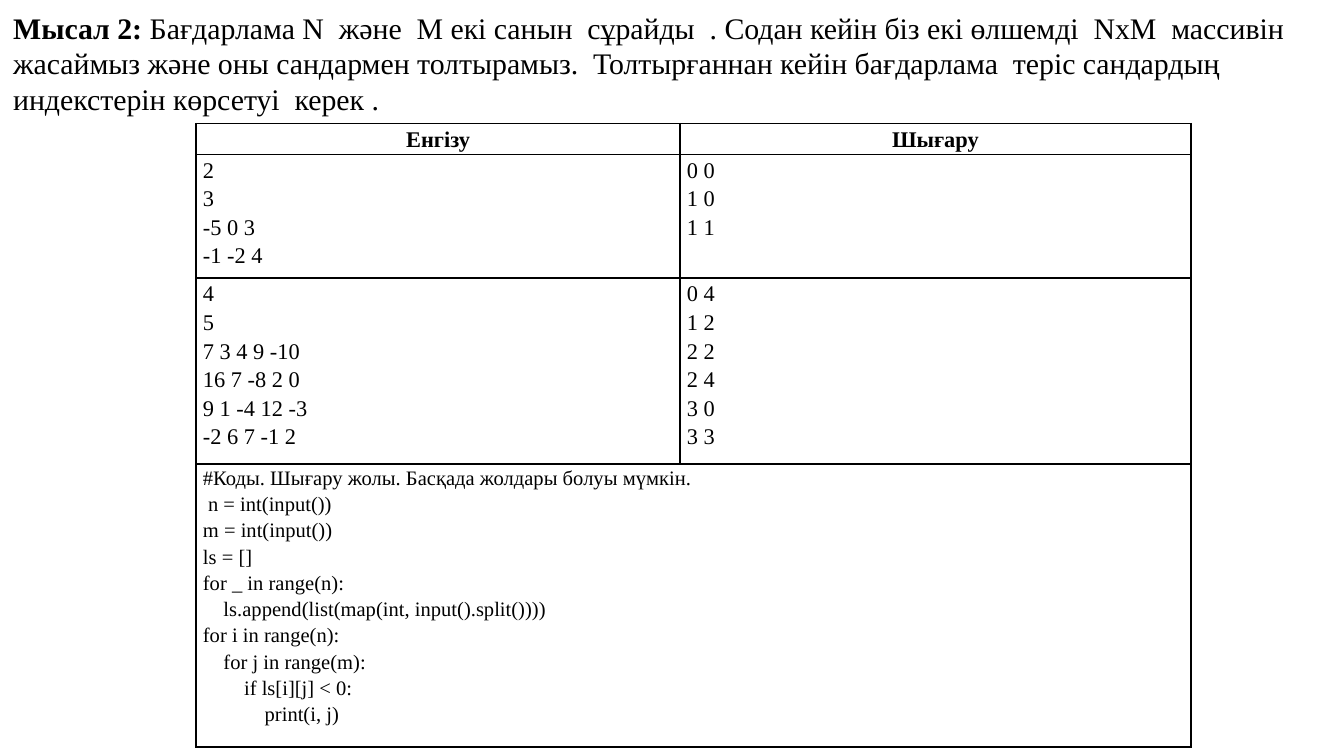
"""Build a slide with a matrix task, its sample runs and the code."""
from lxml import etree
from pptx import Presentation
from pptx.dml.color import RGBColor
from pptx.enum.text import MSO_AUTO_SIZE, PP_ALIGN
from pptx.oxml.ns import qn
from pptx.util import Inches, Pt

BLACK = RGBColor(0, 0, 0)
FONT = "Times New Roman"
CENTER = PP_ALIGN.CENTER
LEFT = PP_ALIGN.LEFT
GROW = MSO_AUTO_SIZE.SHAPE_TO_FIT_TEXT

CODE = """#Коды. Шығару жолы. Басқада жолдары болуы мүмкін.
 n = int(input())
m = int(input())
ls = []
for _ in range(n):
    ls.append(list(map(int, input().split())))
for i in range(n):
    for j in range(m):
        if ls[i][j] < 0:
            print(i, j)"""

ROWS = [
    (0.23, 12, ["Енгізу", "Шығару"]),
    (0.92, 12, ["2\n3\n-5 0 3\n-1 -2 4", "0 0\n1 0\n1 1"]),
    (1.38, 12, ["4\n5\n7 3 4 9 -10\n16 7 -8 2 0\n9 1 -4 12 -3\n-2 6 7 -1 2",
                "0 4\n1 2\n2 2\n2 4\n3 0\n3 3"]),
    (2.11, 11, [CODE]),
]


def style(run, size, bold):
    font = run.font
    font.name = FONT
    font.size = Pt(size)
    font.bold = bold
    font.color.rgb = BLACK


def border(cell):
    props = cell._tc.get_or_add_tcPr()
    for side in ("a:lnL", "a:lnR", "a:lnT", "a:lnB"):
        line = etree.SubElement(props, qn(side), w=str(Pt(1)))
        fill = etree.SubElement(line, qn("a:solidFill"))
        etree.SubElement(fill, qn("a:srgbClr"), val=str(BLACK))


deck = Presentation()
deck.slide_width = Inches(10)
deck.slide_height = Inches(10) * 9 // 16
slide = deck.slides.add_slide(deck.slide_layouts[6])

task = slide.shapes.add_textbox(0, Inches(0.02), Inches(10), Inches(0.91))
frame = task.text_frame
frame.word_wrap = True
frame.auto_size = GROW
para = frame.paragraphs[0]
for text, bold in [
    ("Мысал 2: ", True),
    ("Бағдарлама N  және  M екі санын  сұрайды  . Содан кейін біз екі өлшемді  "
     "NxM  массивін жасаймыз және оны сандармен толтырамыз.  Толтырғаннан кейін "
     "бағдарлама  теріс сандардың индекстерін көрсетуі  керек .", False),
]:
    run = para.add_run()
    run.text = text
    style(run, 16, bold)

table = slide.shapes.add_table(
    len(ROWS), 2, Inches(1.46), Inches(0.92), Inches(7.4), Inches(4.64)).table
table.columns[0].width = Inches(3.6)
table.columns[1].width = Inches(3.8)
table.cell(3, 0).merge(table.cell(3, 1))

for cell in table.iter_cells():
    border(cell)
    cell.fill.background()
    cell.margin_left = cell.margin_right = Inches(0.05)
    cell.margin_top = cell.margin_bottom = 0

for row, (height, size, texts) in enumerate(ROWS):
    table.rows[row].height = Inches(height)
    head = row == 0
    for col, text in enumerate(texts):
        frame = table.cell(row, col).text_frame
        frame.text = text
        for para in frame.paragraphs:
            para.alignment = CENTER if head else LEFT
            para.line_spacing = 1.15
            for run in para.runs:
                style(run, size, head)

deck.save("out.pptx")
